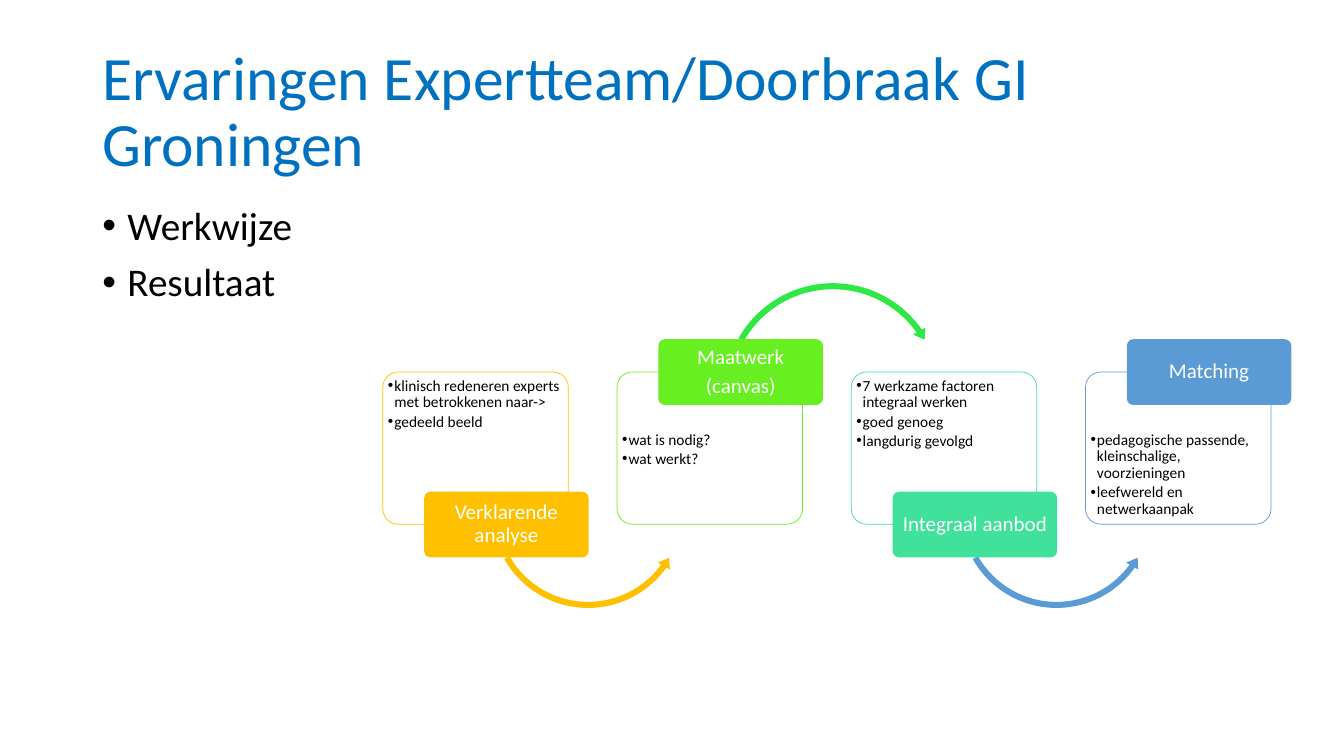
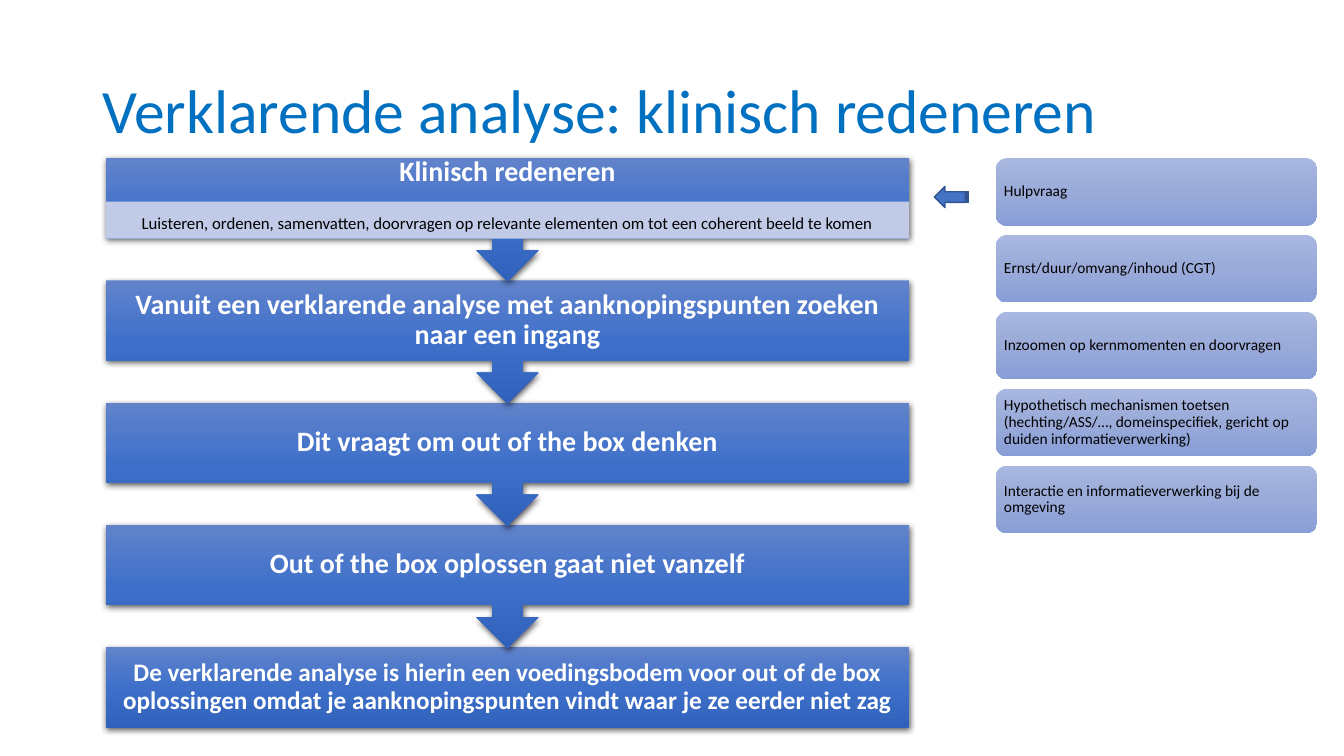
from copy import deepcopy

from lxml.etree import SubElement
from pptx import Presentation
from pptx.dml.color import RGBColor as Rgb
from pptx.enum.shapes import MSO_SHAPE as Preset
from pptx.enum.text import MSO_ANCHOR as Anchor, PP_ALIGN as Align
from pptx.oxml.ns import qn
from pptx.util import Pt

FONT = "Calibri"
COLORS = {
    "title": "0070C0", "text": "000000", "white": "FFFFFF",
    "yellow": "FFC000", "lime": "67EF21", "green": "30E845",
    "mint": "3FE19B", "sky": "5B9BD5", "band": "C1CBE7",
    "arrow": "4472C4", "arrow_edge": "325491",
}
FLOW_GRADIENT = ("6183CB", "3E70CA", "3062BB")
ASPECT_GRADIENT = ("A8B7DF", "9AABD9", "889ED7")

WORK_STEPS = [
    ("yellow", "yellow", ["Verklarende analyse"],
     ["klinisch redeneren experts met betrokkenen naar->", "gedeeld beeld"]),
    ("lime", "green", ["Maatwerk", "(canvas)"],
     ["wat is nodig?", "wat werkt?"]),
    ("mint", "sky", ["Integraal aanbod"],
     ["7 werkzame factoren integraal werken", "goed genoeg", "langdurig gevolgd"]),
    ("sky", None, ["Matching"],
     ["pedagogische passende, kleinschalige, voorzieningen",
      "leefwereld en netwerkaanpak"]),
]
FLOW_STEPS = [
    "Vanuit een verklarende analyse met aanknopingspunten zoeken naar een ingang",
    "Dit vraagt om out of the box denken",
    "Out of the box oplossen gaat niet vanzelf",
]
FLOW_END = ("De verklarende analyse is hierin een voedingsbodem voor out of de box "
            "oplossingen omdat je aanknopingspunten vindt waar je ze eerder niet zag")
FLOW_DETAIL = ("Luisteren, ordenen, samenvatten, doorvragen op relevante elementen "
               "om tot een coherent beeld te komen")
ASPECTS = [
    "Hulpvraag",
    "Ernst/duur/omvang/inhoud (CGT)",
    "Inzoomen op kernmomenten en doorvragen",
    "Hypothetisch mechanismen toetsen (hechting/ASS/…, domeinspecifiek, "
    "gericht op duiden informatieverwerking)",
    "Interactie en informatieverwerking bij de omgeving",
]


def rgb(name):
    return Rgb.from_string(COLORS[name])


def write(shape, lines, size, color="text", bold=False, align=Align.LEFT,
          anchor=Anchor.MIDDLE, margins=(7.2, 3.6, 7.2, 3.6), gap=0, indent=0):
    frame = shape.text_frame
    frame.word_wrap = True
    frame.vertical_anchor = anchor
    (frame.margin_left, frame.margin_top,
     frame.margin_right, frame.margin_bottom) = map(Pt, margins)
    for index, line in enumerate(lines):
        para = frame.add_paragraph() if index else frame.paragraphs[0]
        para.alignment = align
        para.line_spacing = 0.9
        para.space_before = Pt(gap if index else 0)
        if indent:
            props = para._p.get_or_add_pPr()
            props.set("marL", str(Pt(indent)))
            props.set("indent", str(-Pt(indent)))
            SubElement(props, qn("a:buFont"), typeface="Arial")
            SubElement(props, qn("a:buChar"), char="•")
        span = para.add_run()
        span.text = line
        span.font.name = FONT
        span.font.size = Pt(size)
        span.font.bold = bold
        span.font.color.rgb = rgb(color)


def add_text(page, box, lines, size, **style):
    write(page.shapes.add_textbox(*map(Pt, box)), lines, size, **style)


def add_preset(page, preset, box, fill=None, line=None, line_width=0.5):
    shape = page.shapes.add_shape(preset, *map(Pt, box))
    shape.shadow.inherit = False
    if fill:
        shape.fill.solid()
        shape.fill.fore_color.rgb = rgb(fill)
    if line:
        shape.line.color.rgb = rgb(line)
        shape.line.width = Pt(line_width)
    else:
        shape.line.fill.background()
    return shape


def set_gradient(shape, colors):
    shape.fill.gradient()
    shape.fill.gradient_angle = 270
    stop_list = next(shape._element.iter(qn("a:gsLst")))
    stop_list.append(deepcopy(stop_list[-1]))
    for index, (stop, color) in enumerate(zip(shape.fill.gradient_stops, colors)):
        stop.position = index / 2
        stop.color.rgb = Rgb.from_string(color)


def set_shadow(shape):
    effects = shape._element.spPr.find(qn("a:effectLst"))
    shadow = SubElement(effects, qn("a:outerShdw"), blurRad=str(Pt(4.5)),
                        dist=str(Pt(1.5)), dir="5400000", algn="ctr", rotWithShape="0")
    tint = SubElement(shadow, qn("a:srgbClr"), val=COLORS["text"])
    SubElement(tint, qn("a:alpha"), val="63000")


def add_page(deck, title):
    page = deck.slides.add_slide(deck.slide_layouts[6])
    add_text(page, (66, 28.8, 828, 104.4), [title], 44, color="title")
    return page


def add_turn_arrow(page, left, top, color, over):
    if over:
        preset, box = Preset.CIRCULAR_ARROW, (left + 73.9, top - 66.2, 160.6, 160.6)
        thickness, head, angles = 2.7, 3.1, (5.43, 324.98, 209.59)
    else:
        preset, box = Preset.LEFT_CIRCULAR_ARROW, (left + 74.9, top + 28.1, 143.3, 143.3)
        thickness, head, angles = 3, 3.5, (6.12, 35.71, 150.41)
    arrow = add_preset(page, preset, box, color)
    values = [thickness / 100, *(angle * 0.6 for angle in angles), head / 100]
    for index, value in enumerate(values):
        arrow.adjustments[index] = value


def add_work_steps(page, left, top, pitch):
    for index, (color, arrow_color, label, points) in enumerate(WORK_STEPS):
        x = left + index * pitch
        tab_above = index % 2 == 1
        card = add_preset(page, Preset.ROUNDED_RECTANGLE, (x, top, 132.5, 108.7),
                          "white", color)
        card.adjustments[0] = 0.1
        write(card, points, 11, anchor=Anchor.TOP, gap=2, indent=4.5,
              margins=(0.5, 39.5 if tab_above else 1, 1, 0))
        if arrow_color:
            add_turn_arrow(page, x, top, arrow_color, tab_above)
        tab_top = top + (-23.4 if tab_above else 85.5)
        tab = add_preset(page, Preset.ROUNDED_RECTANGLE, (x + 29.5, tab_top, 117.5, 47),
                         color)
        tab.adjustments[0] = 0.1
        write(tab, label, 15, color="white", align=Align.CENTER, gap=5,
              margins=(2, 1.5, 2, 1.5))


def add_flow(page, left, top, width, pitch):
    heading = dict(color="white", bold=True, align=Align.CENTER)
    last = len(FLOW_STEPS) + 1
    for index in range(last, -1, -1):
        y = top + index * pitch
        if index == last:
            preset, height = Preset.RECTANGLE, 57.6
        else:
            preset, height = Preset.DOWN_ARROW_CALLOUT, 88
        step = add_preset(page, preset, (left, y, width, height))
        set_gradient(step, FLOW_GRADIENT)
        set_shadow(step)
        if index == last:
            write(step, [FLOW_END], 18, margins=(10,) * 4, **heading)
        elif index:
            write(step, [FLOW_STEPS[index - 1]], 20, margins=(11.5, 0, 11.5, 0), **heading)
    add_text(page, (left, top - 4, width, 28), ["Klinisch redeneren"], 20,
             margins=(11.5, 0, 11.5, 0), **heading)
    band = add_preset(page, Preset.RECTANGLE, (left, top + 31, width, 26.6), "band")
    write(band, [FLOW_DETAIL], 12, align=Align.CENTER, anchor=Anchor.BOTTOM,
          margins=(6.5, 1.5, 6.5, 4))


def add_aspects(page, left, top, width, pitch):
    for index, aspect in enumerate(ASPECTS):
        chip = add_preset(page, Preset.ROUNDED_RECTANGLE,
                          (left, top + index * pitch, width, 48.2))
        set_gradient(chip, ASPECT_GRADIENT)
        write(chip, [aspect], 11, margins=(3.6,) * 4)


def build_method(deck):
    page = add_page(deck, "Ervaringen Expertteam/Doorbraak GI Groningen")
    add_text(page, (66, 144, 828, 342.7), ["Werkwijze", "Resultaat"], 28,
             anchor=Anchor.TOP, gap=10, indent=18)
    add_work_steps(page, 273.5, 265.7, 167.3)


def build_analysis(deck):
    page = add_page(deck, "Verklarende analyse: klinisch redeneren")
    add_flow(page, 75.6, 113, 573.8, 87.3)
    add_aspects(page, 711.2, 113, 229.7, 54.9)
    pointer = add_preset(page, Preset.STRIPED_RIGHT_ARROW, (667.4, 133.2, 24.5, 15.1),
                         "arrow", "arrow_edge", 1)
    pointer.rotation = 180


def main():
    deck = Presentation()
    deck.slide_width, deck.slide_height = Pt(960), Pt(540)
    build_method(deck)
    build_analysis(deck)
    deck.save("out.pptx")


if __name__ == "__main__":
    main()
